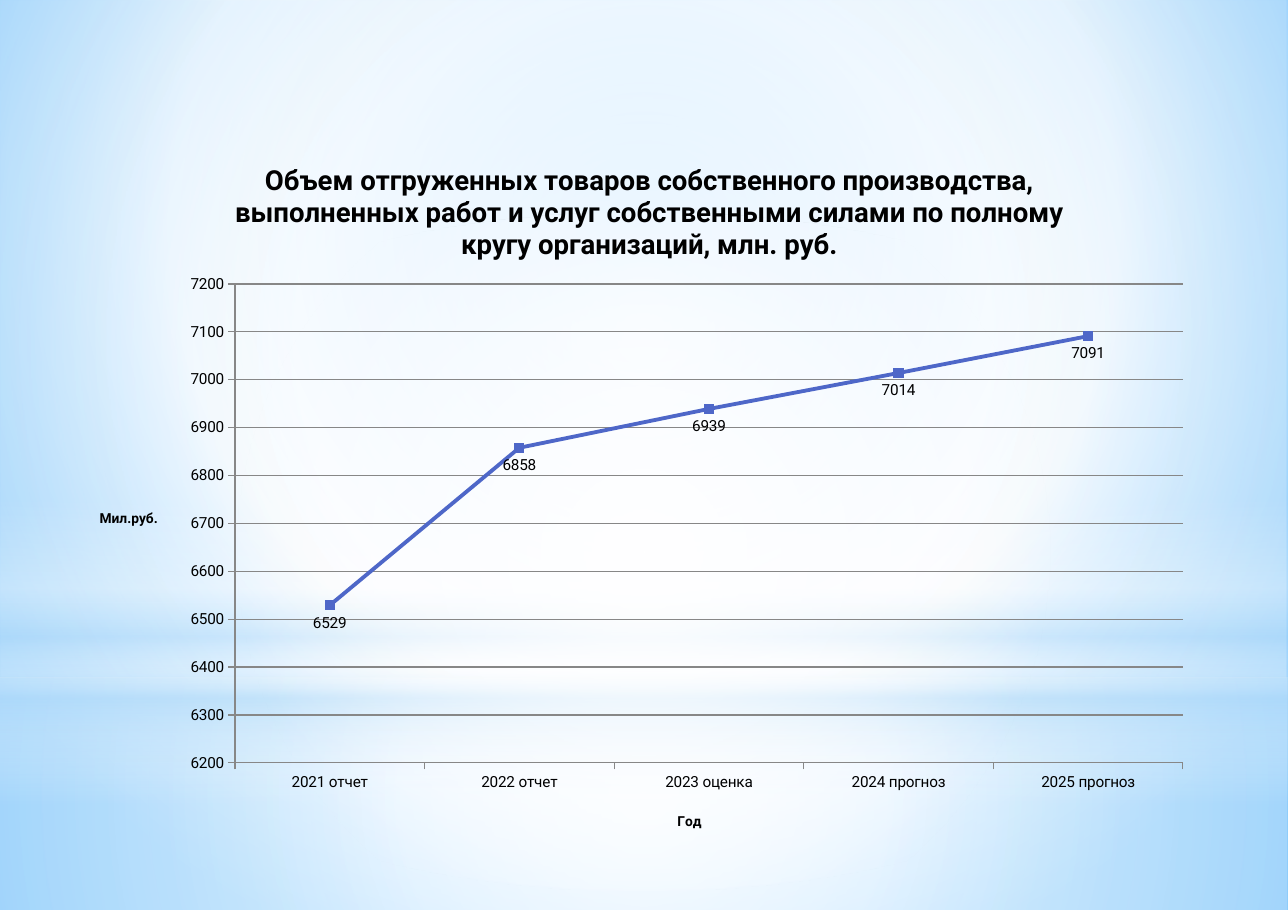
"""Build a slide with a line chart of shipped goods over a soft blue background."""
from pptx import Presentation
from pptx.chart.data import CategoryChartData
from pptx.dml.color import RGBColor
from pptx.enum.chart import (XL_CHART_TYPE as ChartType, XL_LABEL_POSITION as LabelPosition,
                             XL_MARKER_STYLE as MarkerStyle, XL_TICK_MARK as TickMark)
from pptx.enum.shapes import MSO_SHAPE as Preset
from pptx.oxml import parse_xml
from pptx.oxml.ns import nsdecls, qn
from pptx.util import Pt

PX = 8298
PAGE = (1288, 910)
FONT = "Roboto"
BLACK = RGBColor(0, 0, 0)
WHITE = RGBColor(0xFF, 0xFF, 0xFF)
GRAY = RGBColor(0x87, 0x87, 0x87)
BLUE = RGBColor(0x4E, 0x67, 0xC8)
PALE = RGBColor(0xB4, 0xDC, 0xFA)
SKY = RGBColor(0x9E, 0xD5, 0xFF)
AZURE = RGBColor(0x5B, 0xB9, 0xFF)

TITLE = ("Объем отгруженных товаров собственного производства, выполненных работ "
         "и услуг собственными силами по полному кругу организаций, млн. руб.")
YEAR_TITLE = "Год"
VALUE_TITLE = "Мил.руб."
SERIES = "Series 1"
VOLUMES = {"2021 отчет": 6529, "2022 отчет": 6858, "2023 оценка": 6939,
           "2024 прогноз": 7014, "2025 прогноз": 7091}

CHART = (83, 133, 1124, 716)
PLOT = (235, 284, 948, 479)
TITLE_AT = (230, 157)
YEAR_AT = (675, 810)
VALUE_AT = (97, 507)

CENTER = (50, 50, 50, 50)
BACKDROP = ([(0, SKY, 100), (60, WHITE, 100), (100, AZURE, 100)], (20, 10, 20, 60))
GLOWS = [
    (Preset.RECTANGLE, (0, 678, 1288, 232),
     [(0, WHITE, 91), (37, WHITE, 76), (100, PALE, 79)], CENTER),
    (Preset.RECTANGLE, (0, 0, 1288, 678),
     [(0, WHITE, 89), (48, WHITE, 62), (100, PALE, 79)], CENTER),
    (Preset.RECTANGLE, (0, 500, 1288, 303),
     [(0, WHITE, 0), (29, WHITE, 30), (45, PALE, 40), (55, WHITE, 26),
      (65, PALE, 60), (100, WHITE, 0)], None),
    (Preset.OVAL, (0, 213, 1288, 678), [(0, WHITE, 100), (56, WHITE, 0)], CENTER),
]


def emu(lengths):
    return [length * PX for length in lengths]


def set_gradient(fill, parent, stops, focus):
    fill.solid()
    fill.fore_color.rgb = WHITE
    marks = "".join(
        f'<a:gs pos="{place * 1000}"><a:srgbClr val="{color}">'
        f'<a:alpha val="{alpha * 1000}"/></a:srgbClr></a:gs>'
        for place, color, alpha in stops)
    if focus:
        sides = " ".join(f'{side}="{share * 1000}"' for side, share in zip("ltrb", focus))
        course = f'<a:path path="circle"><a:fillToRect {sides}/></a:path>'
    else:
        course = '<a:lin ang="5400000" scaled="0"/>'
    gradient = parse_xml(f'<a:gradFill {nsdecls("a")} rotWithShape="1">'
                         f'<a:gsLst>{marks}</a:gsLst>{course}</a:gradFill>')
    parent.replace(parent.find(qn("a:solidFill")), gradient)


def place(element, index, left, top, width=None, height=None):
    """Pin a chart part to a spot given in page px."""
    shares = {"x": (left - CHART[0]) / CHART[2], "y": (top - CHART[1]) / CHART[3]}
    target = ""
    if width:
        target = '<c:layoutTarget val="inner"/>'
        shares.update(w=width / CHART[2], h=height / CHART[3])
    modes = '<c:xMode val="edge"/><c:yMode val="edge"/>'
    values = "".join(f'<c:{key} val="{share:.4f}"/>' for key, share in shares.items())
    for old in element.findall(qn("c:layout")):
        element.remove(old)
    element.insert(index, parse_xml(
        f'<c:layout {nsdecls("c")}><c:manualLayout>{target}{modes}{values}'
        '</c:manualLayout></c:layout>'))


def set_title(title, text, size, spot):
    frame = title.text_frame
    frame.text = text
    frame.paragraphs[0].runs[0].font.size = Pt(size)
    style_font(frame.paragraphs[0].runs[0].font, size, True)
    title.element.find(".//" + qn("a:bodyPr")).set("rot", "0")
    place(title.element, 1, *spot)


def style_font(font, size, bold=False):
    font.name, font.size, font.bold = FONT, Pt(size), bold
    font.color.rgb = BLACK


def style_line(line, color, width):
    line.color.rgb = color
    line.width = Pt(width)


def add_glows(page):
    set_gradient(page.background.fill, page.element.find(".//" + qn("p:bgPr")), *BACKDROP)
    for preset, area, stops, focus in GLOWS:
        glow = page.shapes.add_shape(preset, *emu(area))
        glow.shadow.inherit = False
        glow.line.fill.background()
        set_gradient(glow.fill, glow.element.spPr, stops, focus)


def add_volume_chart(page):
    data = CategoryChartData(number_format="0")
    data.categories = list(VOLUMES)
    data.add_series(SERIES, list(VOLUMES.values()))
    chart = page.shapes.add_chart(ChartType.LINE_MARKERS, *emu(CHART), data).chart
    chart.has_legend = False
    style_font(chart.font, 10)
    chart.has_title = True
    set_title(chart.chart_title, TITLE, 18, TITLE_AT)
    place(chart.element.find(".//" + qn("c:plotArea")), 0, *PLOT)

    years, values = chart.category_axis, chart.value_axis
    for axis, text, spot in ((years, YEAR_TITLE, YEAR_AT), (values, VALUE_TITLE, VALUE_AT)):
        axis.has_title = True
        set_title(axis.axis_title, text, 9, spot)
        axis.major_tick_mark = TickMark.OUTSIDE
        style_line(axis.format.line, GRAY, 0.75)
    values.minimum_scale, values.maximum_scale, values.major_unit = 6200, 7200, 100
    values.tick_labels.number_format = "0"
    values.tick_labels.number_format_is_linked = False
    values.has_major_gridlines = True
    style_line(values.major_gridlines.format.line, GRAY, 0.75)

    plot = chart.plots[0]
    plot.vary_by_categories = False
    series = plot.series[0]
    series.smooth = False
    style_line(series.format.line, BLUE, 2.5)
    series.marker.style = MarkerStyle.SQUARE
    series.marker.size = 6
    series.marker.format.fill.solid()
    series.marker.format.fill.fore_color.rgb = BLUE
    series.marker.format.line.color.rgb = BLUE
    labels = series.data_labels
    labels.show_value = True
    labels.position = LabelPosition.BELOW
    labels.number_format = "0"
    labels.number_format_is_linked = False
    style_font(labels.font, 10)


def main():
    deck = Presentation()
    deck.slide_width, deck.slide_height = emu(PAGE)
    page = deck.slides.add_slide(deck.slide_layouts[6])
    add_glows(page)
    add_volume_chart(page)
    deck.save("out.pptx")


if __name__ == "__main__":
    main()
